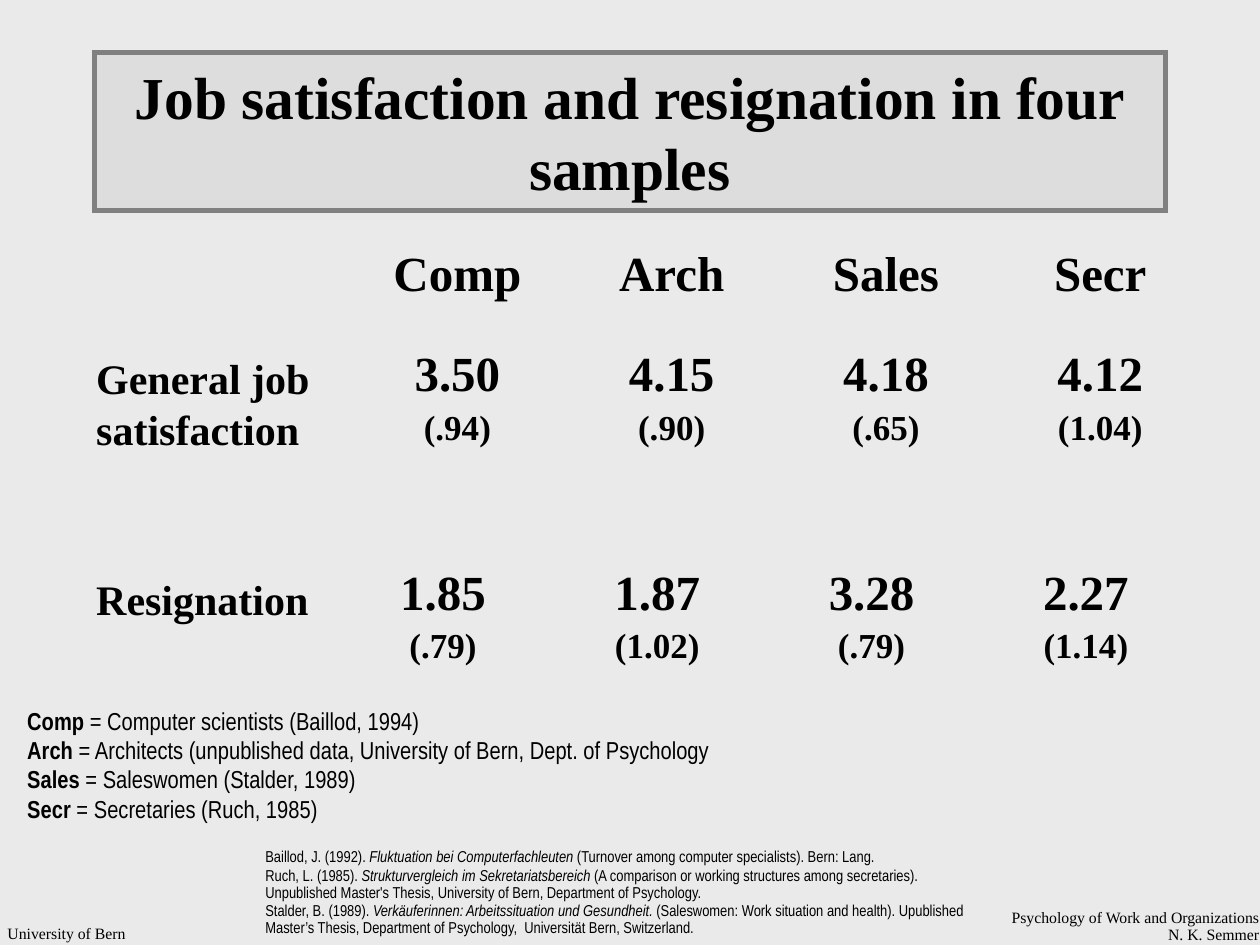
from lxml.etree import SubElement
from pptx import Presentation
from pptx.dml.color import RGBColor
from pptx.enum.text import MSO_ANCHOR as Anchor, PP_ALIGN as Align
from pptx.oxml.ns import qn
from pptx.util import Cm, Pt

SERIF, NARROW = "Times New Roman", "Arial Narrow"
BLACK, BACKGROUND, PANEL, BORDER = "000000", "EAEAEA", "DDDDDD", "808080"
NO_GRID_STYLE = "{2D5ABB26-0587-4C30-8999-92F81FD0307C}"
ROW_COUNT, ROW_HEIGHT, COLUMN_WIDTH = 6, 2.01, 4.32

TITLE = "Job satisfaction and resignation in four samples"
COURSE = ["Psychology of Work and Organizations", "N. K. Semmer"]
SAMPLES = ["Comp", "Arch", "Sales", "Secr"]
SATISFACTION = [("3.50", "(.94)"), ("4.15", "(.90)"), ("4.18", "(.65)"), ("4.12", "(1.04)")]
RESIGNATION = [("1.85", "(.79)"), ("1.87", "(1.02)"), ("3.28", "(.79)"), ("2.27", "(1.14)")]
TABLES = [
    ((7.06, 4.87), {0: [(name,) for name in SAMPLES], 1: SATISFACTION}),
    ((6.77, 5.26), {3: RESIGNATION}),
]
ROW_LABELS = [
    ("General job satisfaction", (1.69, 6.99, 5.72, 2.29)),
    ("Resignation", (1.69, 11.43, 5.72, 1.27)),
]
LEGEND = [
    "Computer scientists (Baillod, 1994)",
    "Architects (unpublished data, University of Bern, Dept. of Psychology",
    "Saleswomen (Stalder, 1989)",
    "Secretaries (Ruch, 1985)",
]
REFERENCES = [
    ("Baillod, J. (1992). ", "Fluktuation bei Computerfachleuten",
     " (Turnover among computer specialists). Bern: Lang."),
    ("Ruch, L. (1985). ", "Strukturvergleich im Sekretariatsbereich",
     " (A comparison or working structures among secretaries). Unpublished Master's Thesis, "
     "University of Bern, Department of Psychology."),
    ("Stalder, B. (1989). ", "Verkäuferinnen: Arbeitssituation und Gesundheit.",
     " (Saleswomen: Work situation and health). Upublished Master’s Thesis, "
     "Department of Psychology,  Universität Bern, Switzerland."),
]


def color(value):
    """Turn a hex string into a colour."""
    return RGBColor.from_string(value)


def write(frame, paragraphs, size, font=SERIF, gap=0, **layout):
    """Fill a text frame from lists of (text, font values) runs."""
    for index, runs in enumerate(paragraphs):
        paragraph = frame.paragraphs[0] if index == 0 else frame.add_paragraph()
        for name, value in layout.items():
            setattr(paragraph, name, value)
        paragraph.space_before = Pt(gap if index else 0)
        for text, values in runs:
            if text == "\n":
                paragraph.add_line_break()
                continue
            run = paragraph.add_run()
            run.text = text
            run.font.color.rgb = color(BLACK)
            for name, value in {"name": font, "size": Pt(size), **values}.items():
                setattr(run.font, name, value)


def add_text(slide, box, paragraphs, size, anchor=Anchor.TOP, **layout):
    """Add a wrapping text box."""
    frame = slide.shapes.add_textbox(*map(Cm, box)).text_frame
    frame.word_wrap = True
    frame.vertical_anchor = anchor
    write(frame, paragraphs, size, **layout)


def add_title(slide):
    """Place and format the title placeholder."""
    title = slide.shapes.title
    title.left, title.top, title.width, title.height = map(Cm, (1.9, 1.06, 21.59, 3.18))
    title.fill.solid()
    title.fill.fore_color.rgb = color(PANEL)
    title.line.color.rgb = color(BORDER)
    title.line.width = Pt(3)
    outline = title._element.spPr.find(qn("a:ln"))
    SubElement(outline, qn("a:miter")).set("lim", "800000")
    title.text_frame.word_wrap = True
    title.text_frame.vertical_anchor = Anchor.MIDDLE
    write(title.text_frame, [[(TITLE, {"bold": True})]], 34, alignment=Align.CENTER)


def add_values(slide, position, rows):
    """Add a plain table with means above standard deviations."""
    size = (COLUMN_WIDTH * len(SAMPLES), ROW_HEIGHT * ROW_COUNT)
    frame = slide.shapes.add_table(ROW_COUNT, len(SAMPLES), *map(Cm, position + size))
    table = frame.table
    table.first_row = table.horz_banding = False
    table._tbl.tblPr[0].text = NO_GRID_STYLE
    for cell in table.iter_cells():
        cell.fill.background()
    for row, entries in rows.items():
        for column, entry in enumerate(entries):
            lines = [[(text, {"bold": True, "size": Pt(points)})]
                     for text, points in zip(entry, (28, 20))]
            write(table.cell(row, column).text_frame, lines, 28, gap=4, alignment=Align.CENTER)


def main():
    """Build and save the slide."""
    presentation = Presentation()
    presentation.slide_width, presentation.slide_height = Cm(25.4), Cm(19.05)
    slide = presentation.slides.add_slide(presentation.slide_layouts[5])
    slide.background.fill.solid()
    slide.background.fill.fore_color.rgb = color(BACKGROUND)

    course, lecturer = COURSE
    add_text(slide, (13.77, 18.21, 11.86, 0.84),
             [[(course, {}), ("\n", {}), (lecturer, {})]], 9,
             alignment=Align.RIGHT, line_spacing=0.9)
    add_text(slide, (-0.1, 18.49, 11.43, 0.84), [[("University of Bern", {})]], 9)
    add_title(slide)
    for position, rows in TABLES:
        add_values(slide, position, rows)
    for label, box in ROW_LABELS:
        add_text(slide, box, [[(label, {"bold": True})]], 24)
    legend = [[(name, {"bold": True}), (f" = {meaning}", {})]
              for name, meaning in zip(SAMPLES, LEGEND)]
    add_text(slide, (0.3, 14.1, 15.77, 2.62), legend, 14, Anchor.MIDDLE, font=NARROW)
    references = [[(author, {}), (work, {"italic": True}), (details, {})]
                  for author, work, details in REFERENCES]
    add_text(slide, (5.1, 16.99, 14.81, 2.03), references, 9, Anchor.MIDDLE,
             font=NARROW, gap=0.9, line_spacing=0.9)
    presentation.save("out.pptx")


if __name__ == "__main__":
    main()
